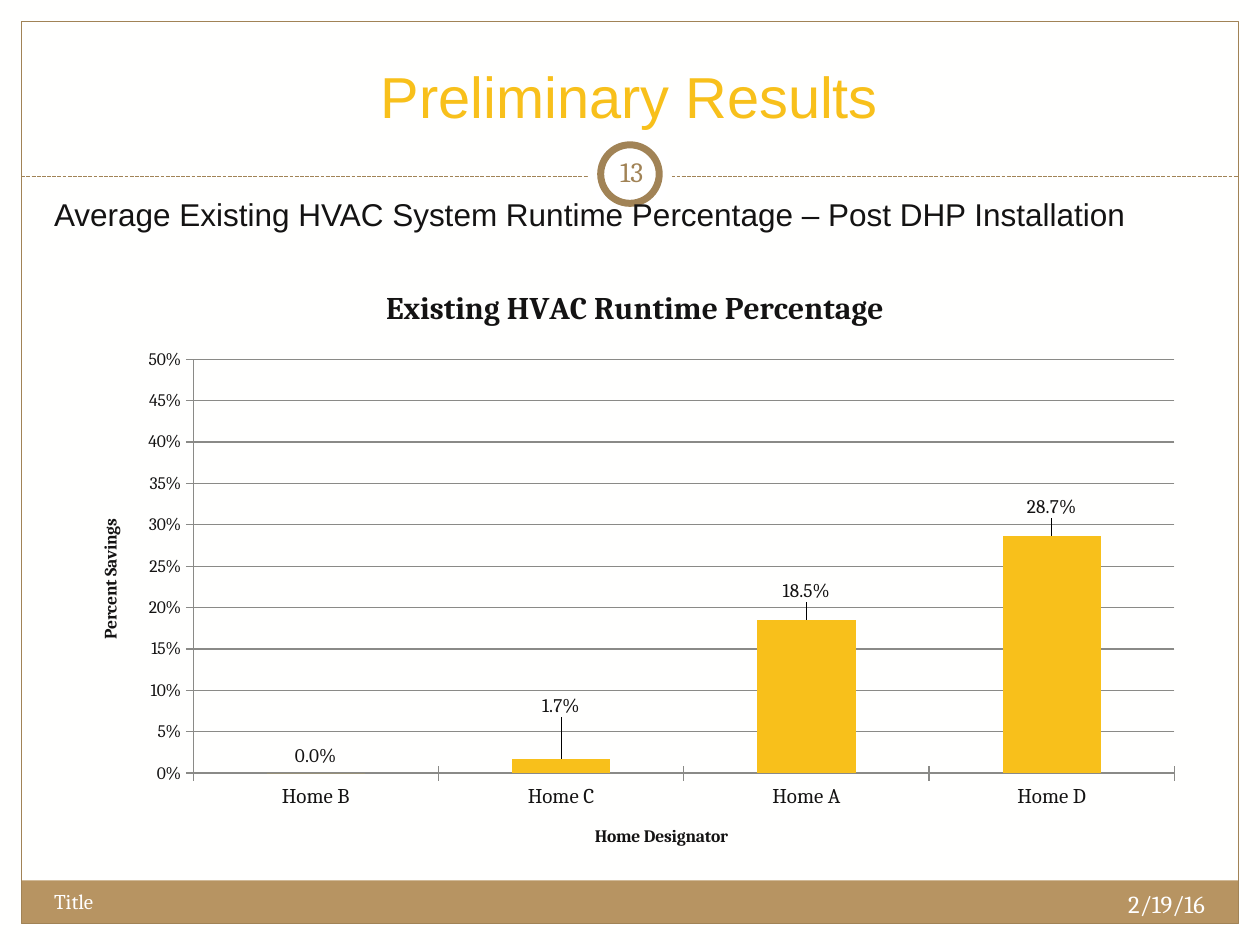
from dataclasses import dataclass

from lxml import etree
from pptx import Presentation
from pptx.chart.data import CategoryChartData
from pptx.dml.color import RGBColor
from pptx.enum.chart import XL_CHART_TYPE, XL_LABEL_POSITION, XL_TICK_MARK
from pptx.enum.dml import MSO_LINE
from pptx.enum.shapes import MSO_CONNECTOR, MSO_SHAPE
from pptx.enum.text import MSO_ANCHOR, PP_ALIGN
from pptx.oxml import parse_xml
from pptx.oxml.ns import qn
from pptx.util import Cm, Pt

COLUMNS = XL_CHART_TYPE.COLUMN_CLUSTERED
OUTSIDE = XL_LABEL_POSITION.OUTSIDE_END
CROSS = XL_TICK_MARK.CROSS
DASH = MSO_LINE.SQUARE_DOT
STRAIGHT = MSO_CONNECTOR.STRAIGHT
RECTANGLE, OVAL = MSO_SHAPE.RECTANGLE, MSO_SHAPE.OVAL
TOP, MIDDLE, BOTTOM = MSO_ANCHOR.TOP, MSO_ANCHOR.MIDDLE, MSO_ANCHOR.BOTTOM
LEFT, CENTER, RIGHT = PP_ALIGN.LEFT, PP_ALIGN.CENTER, PP_ALIGN.RIGHT
CHART_NS = "http://schemas.openxmlformats.org/drawingml/2006/chart"


@dataclass(frozen=True)
class Theme:
    """Colours, fonts and type sizes of the slide."""
    paper: RGBColor = RGBColor.from_string("FFFFFE")
    white: RGBColor = RGBColor.from_string("FFFFFF")
    ink: RGBColor = RGBColor.from_string("141313")
    gold: RGBColor = RGBColor.from_string("F8C01B")
    tan: RGBColor = RGBColor.from_string("B79462")
    bronze: RGBColor = RGBColor.from_string("A18356")
    grid: RGBColor = RGBColor.from_string("8A8A87")
    sans: str = "Arial"
    serif: str = "Cambria"
    title: int = 33
    heading: int = 18
    number: int = 16
    date: int = 14
    footer: int = 12
    label: int = 11
    axis: int = 10


THEME = Theme()


def style_font(font, size, color, name=THEME.serif, bold=False):
    """Set the face, size, colour and weight of a font."""
    font.name, font.size, font.bold = name, Pt(size), bold
    font.color.rgb = color


def add_text(slide, box, text, size, color, name=THEME.serif, align=LEFT, anchor=TOP):
    """Place one paragraph of text in a box given in centimetres."""
    frame = slide.shapes.add_textbox(*map(Cm, box)).text_frame
    frame.word_wrap = True
    frame.vertical_anchor = anchor
    frame.text = text
    paragraph = frame.paragraphs[0]
    paragraph.alignment = align
    style_font(paragraph.runs[0].font, size, color, name)
    return frame


def add_panel(slide, kind, box, fill=None, line=None, width=0.75):
    """Place a preset shape with an optional fill and outline."""
    shape = slide.shapes.add_shape(kind, *map(Cm, box))
    shape.shadow.inherit = False
    if fill is None:
        shape.fill.background()
    else:
        shape.fill.solid()
        shape.fill.fore_color.rgb = fill
    if line is None:
        shape.line.fill.background()
    else:
        shape.line.color.rgb = line
        shape.line.width = Pt(width)


def add_frame(slide, box, rule_y, band_height):
    """Draw the border, the bottom band and the dashed rule."""
    left, top, width, height = box
    band = (left, top + height - band_height, width, band_height)
    add_panel(slide, RECTANGLE, band, fill=THEME.tan)
    add_panel(slide, RECTANGLE, box, line=THEME.bronze)
    y = Cm(top + rule_y)
    rule = slide.shapes.add_connector(STRAIGHT, Cm(left), y, Cm(left + width), y)
    rule.line.color.rgb = THEME.bronze
    rule.line.width = Pt(0.75)
    rule.line.dash_style = DASH
    etree.SubElement(rule._element.spPr, qn("a:effectLst"))


def add_badge(slide, box, number):
    """Draw the ringed slide number over the rule."""
    left, top, size, _ = box
    inset = 0.26
    ring = (left + inset, top + inset, size - 2 * inset, size - 2 * inset)
    add_panel(slide, OVAL, box, fill=THEME.white)
    add_panel(slide, OVAL, ring, fill=THEME.white, line=THEME.bronze, width=4)
    frame = add_text(slide, (left + 0.25, top + 0.18, 1.27, 1.22), number,
                     THEME.number, THEME.bronze, align=CENTER, anchor=MIDDLE)
    frame.margin_left = frame.margin_right = Cm(0.13)
    frame.margin_top = frame.margin_bottom = Cm(0.13)


def add_footer(slide, box, title, date):
    """Write the footer title at the left and the date at the right."""
    left, top, width, height = box
    half = width / 2
    add_text(slide, (left, top, half, height), title, THEME.footer, THEME.white)
    add_text(slide, (left + half, top, half, height), date, THEME.date,
             THEME.white, align=RIGHT)


def manual_layout(target="", mode="", **values):
    """Return a chart layout element with the given fractions."""
    parts = f'<c:layoutTarget val="{target}"/>' if target else ""
    if mode:
        parts += f'<c:xMode val="{mode}"/><c:yMode val="{mode}"/>'
    parts += "".join(f'<c:{key} val="{value}"/>' for key, value in values.items())
    return parse_xml(f'<c:layout xmlns:c="{CHART_NS}"><c:manualLayout>{parts}'
                     "</c:manualLayout></c:layout>")


def set_title(owner, text, size):
    """Give a chart or an axis a bold title."""
    frame = (owner.chart_title if hasattr(owner, "chart_title") else owner.axis_title).text_frame
    frame.text = text
    style_font(frame.paragraphs[0].runs[0].font, size, THEME.ink, bold=True)


def style_axis(axis, title, size):
    """Set the title, ticks, type and line of an axis."""
    set_title(axis, title, THEME.axis)
    axis.major_tick_mark = CROSS
    style_font(axis.tick_labels.font, size, THEME.ink)
    axis.format.line.color.rgb = THEME.grid
    axis.format.line.width = Pt(0.75)


def label_points(series, shifts):
    """Label each column, raised by a fraction of the chart height."""
    for index, shift in enumerate(shifts):
        label = series.points[index].data_label
        style_font(label.font, THEME.label, THEME.ink)
        label.position = OUTSIDE
        element = label.font._element.getparent().getparent().getparent()
        element = next(element.iterancestors(qn("c:dLbl")), element)
        number = etree.Element(qn("c:numFmt"), formatCode="0.0%", sourceLinked="0")
        element.insert(1, manual_layout(x=0, y=-shift))
        element.insert(2, number)


def add_runtime_chart(slide, box):
    """Draw the column chart of runtime percentage by home."""
    data = CategoryChartData(number_format="0.0%")
    data.categories = ["Home B", "Home C", "Home A", "Home D"]
    data.add_series("Series 1", [0, 0.017, 0.185, 0.287])
    chart = slide.shapes.add_chart(COLUMNS, *map(Cm, box), data).chart
    style_font(chart.font, THEME.axis, THEME.ink)
    chart.has_legend = False
    set_title(chart, "Existing HVAC Runtime Percentage", THEME.heading)

    style_axis(chart.category_axis, "Home Designator", THEME.footer)
    values = chart.value_axis
    style_axis(values, "Percent Savings", THEME.axis)
    values.minimum_scale, values.maximum_scale, values.major_unit = 0, 0.5, 0.05
    values.tick_labels.number_format = "0%"
    values.tick_labels.number_format_is_linked = False
    values.major_gridlines.format.line.color.rgb = THEME.grid
    values.major_gridlines.format.line.width = Pt(0.75)

    plot = chart.plots[0]
    plot.gap_width = 150
    plot.vary_by_categories = False
    series = plot.series[0]
    series.format.fill.solid()
    series.format.fill.fore_color.rgb = THEME.gold
    label_points(series, [0, 0.06, 0.02, 0.02])

    area = chart._chartSpace.chart.plotArea
    for layout in area.findall(qn("c:layout")):
        area.remove(layout)
    area.insert(0, manual_layout("inner", "edge", x=0.107, y=0.16, w=0.873, h=0.68))


def build_results_slide(presentation):
    """Assemble the preliminary results slide."""
    slide = presentation.slides.add_slide(presentation.slide_layouts[6])
    slide.background.fill.solid()
    slide.background.fill.fore_color.rgb = THEME.paper
    add_frame(slide, (0.43, 0.43, 24.54, 18.19), 3.13, 0.87)
    add_badge(slide, (11.85, 2.66, 1.7, 1.7), "13")
    add_text(slide, (0.84, 0.64, 23.7, 2.1), "Preliminary Results", THEME.title,
             THEME.gold, THEME.sans, CENTER, BOTTOM)
    add_footer(slide, (0.84, 17.79, 23.7, 1.02), "Title", "2/19/16")
    add_text(slide, (0.84, 3.81, 23.62, 1.2),
             "Average Existing HVAC System Runtime Percentage – Post DHP Installation",
             THEME.heading, THEME.ink, THEME.sans)
    add_runtime_chart(slide, (1.47, 5.28, 22.66, 12.27))


def main():
    """Create the presentation and save it."""
    presentation = Presentation()
    presentation.slide_width, presentation.slide_height = Cm(25.4), Cm(19.05)
    build_results_slide(presentation)
    presentation.save("out.pptx")


if __name__ == "__main__":
    main()
